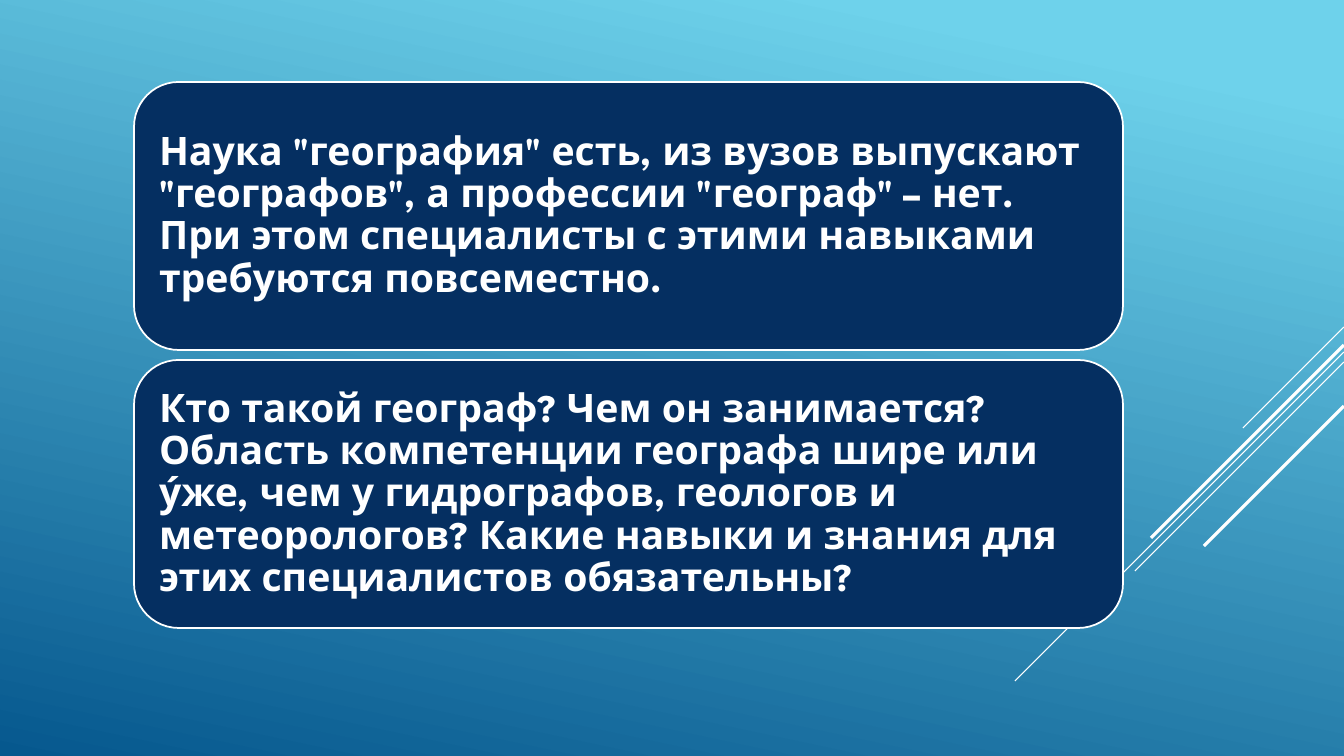
from dataclasses import dataclass

from pptx import Presentation
from pptx.dml.color import RGBColor
from pptx.enum.shapes import MSO_CONNECTOR, MSO_SHAPE
from pptx.enum.text import MSO_ANCHOR, PP_ALIGN
from pptx.oxml.ns import qn
from pptx.slide import Slide
from pptx.util import Emu, Pt

SLIDE_W, SLIDE_H = 1344, 756
EMU_PER_PX = 12192000 / SLIDE_W

SKY = RGBColor(0x6E, 0xD2, 0xEB)
OCEAN = RGBColor(0x06, 0x58, 0x8E)
NAVY = RGBColor(0x05, 0x2F, 0x61)
WHITE = RGBColor(0xFF, 0xFF, 0xFF)
FONT = "League Spartan"

CARD_LEFT, CARD_TOP, CARD_W, CARD_H = 134, 82, 989, 268
CARD_STEP = 278
CARD_INSET = 12


@dataclass
class Streak:
    """A 45° line running down and left from the right slide edge."""
    top: int
    run: int
    weight: float


STREAKS = [
    Streak(327, 101, 0.75),
    Streak(352, 329, 0.75),
    Streak(362, 209, 0.75),
    Streak(345, 193, 2.25),
    Streak(406, 140, 2.25),
]

CARD_TEXTS = [
    'Наука "география" есть, из вузов выпускают "географов", а профессии '
    '"географ" – нет. При этом специалисты с этими навыками требуются '
    'повсеместно.',
    'Кто такой географ? Чем он занимается? Область компетенции географа шире '
    'или у́же, чем у гидрографов, геологов и метеорологов? Какие навыки и '
    'знания для этих специалистов обязательны?',
]


def px(n: int) -> Emu:
    return Emu(round(n * EMU_PER_PX))


def paint_background(s: Slide) -> None:
    fill = s.background.fill
    fill.gradient()
    fill.gradient_angle = 258
    for stop, color, position in zip(fill.gradient_stops, (SKY, OCEAN), (0.1, 1)):
        stop.color.rgb = color
        stop.position = position


def draw_streak(s: Slide, streak: Streak) -> None:
    line = s.shapes.add_connector(
        MSO_CONNECTOR.STRAIGHT, px(SLIDE_W), px(streak.top),
        px(SLIDE_W - streak.run), px(streak.top + streak.run))
    line.line.color.rgb = WHITE
    line.line.width = Pt(streak.weight)
    sp_pr = line._element.spPr
    sp_pr.append(sp_pr.makeelement(qn("a:effectLst"), {}))


def draw_card(s: Slide, top: int, text: str) -> None:
    sp = s.shapes.add_shape(MSO_SHAPE.ROUNDED_RECTANGLE, px(CARD_LEFT), px(top),
                            px(CARD_W), px(CARD_H))
    sp.shadow.inherit = False
    sp.fill.solid()
    sp.fill.fore_color.rgb = NAVY
    sp.line.color.rgb = WHITE
    sp.line.width = Pt(1.25)

    tf = sp.text_frame
    tf.word_wrap = True
    tf.vertical_anchor = MSO_ANCHOR.MIDDLE
    tf.margin_left = tf.margin_right = px(CARD_INSET)
    tf.margin_top = tf.margin_bottom = px(CARD_INSET)
    tf.text = text
    p = tf.paragraphs[0]
    p.alignment = PP_ALIGN.LEFT
    p.line_spacing = 0.9
    r = p.runs[0]
    r.font.name = FONT
    r.font.size = Pt(28)
    r.font.bold = True
    r.font.color.rgb = WHITE


def main() -> None:
    prs = Presentation()
    prs.slide_width, prs.slide_height = px(SLIDE_W), px(SLIDE_H)
    s = prs.slides.add_slide(prs.slide_layouts[6])

    # Gradient backdrop with diagonal streaks
    paint_background(s)
    for streak in STREAKS:
        draw_streak(s, streak)

    # Stacked text cards
    for i, text in enumerate(CARD_TEXTS):
        draw_card(s, CARD_TOP + i * CARD_STEP, text)

    prs.save("out.pptx")


if __name__ == "__main__":
    main()
